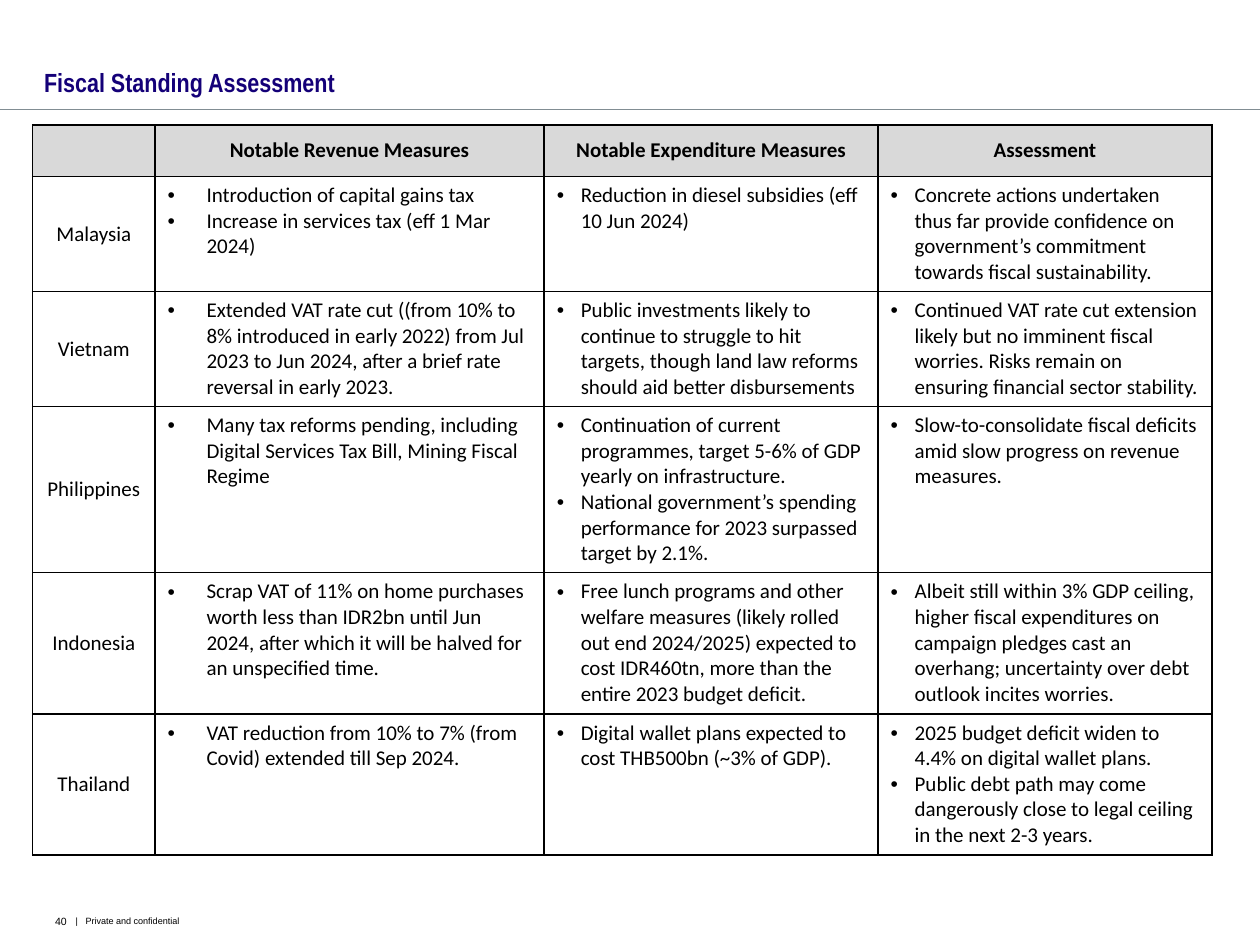
from dataclasses import dataclass

from lxml import etree
from pptx import Presentation
from pptx.dml.color import RGBColor
from pptx.enum.shapes import MSO_CONNECTOR
from pptx.enum.text import MSO_ANCHOR, MSO_AUTO_SIZE, PP_ALIGN
from pptx.oxml.ns import qn
from pptx.util import Inches, Pt

LEFT, CENTER, RIGHT = PP_ALIGN.LEFT, PP_ALIGN.CENTER, PP_ALIGN.RIGHT
TOP, MIDDLE, BOTTOM = MSO_ANCHOR.TOP, MSO_ANCHOR.MIDDLE, MSO_ANCHOR.BOTTOM
STRAIGHT = MSO_CONNECTOR.STRAIGHT
NO_AUTOFIT = MSO_AUTO_SIZE.NONE


@dataclass(frozen=True)
class Theme:
    title_font: str = "Arial Narrow"
    table_font: str = "Calibri"
    footer_font: str = "Arial"
    title_size: float = 15
    table_size: float = 12
    page_size: float = 6
    footer_size: float = 5.2
    ink: str = "000000"
    title: str = "140078"
    rule: str = "818D93"
    header: str = "D9D9D9"


THEME = Theme()

# Table content: country, then the bullets of each column
HEADERS = ["", "Notable Revenue Measures", "Notable Expenditure Measures", "Assessment"]
COUNTRIES = [
    ("Malaysia",
     ["Introduction of capital gains tax",
      "Increase in services tax (eff 1 Mar 2024)"],
     ["Reduction in diesel subsidies (eff 10 Jun 2024)"],
     ["Concrete actions undertaken thus far provide confidence on "
      "government’s commitment towards fiscal sustainability."]),
    ("Vietnam",
     ["Extended VAT rate cut ((from 10% to 8% introduced in early 2022) from "
      "Jul 2023 to Jun 2024, after a brief rate reversal in early 2023."],
     ["Public investments likely to continue to struggle to hit targets, "
      "though land law reforms should aid better disbursements"],
     ["Continued VAT rate cut extension likely but no imminent fiscal worries. "
      "Risks remain on ensuring financial sector stability."]),
    ("Philippines",
     ["Many tax reforms pending, including Digital Services Tax Bill, "
      "Mining Fiscal Regime"],
     ["Continuation of current programmes, target 5-6% of GDP yearly on infrastructure.",
      "National government’s spending performance for 2023 surpassed target by 2.1%."],
     ["Slow-to-consolidate fiscal deficits amid slow progress on revenue measures."]),
    ("Indonesia",
     ["Scrap VAT of 11% on home purchases worth less than IDR2bn until Jun 2024, "
      "after which it will be halved for an unspecified time."],
     ["Free lunch programs and other welfare measures (likely rolled out end "
      "2024/2025) expected to cost IDR460tn, more than the entire 2023 budget deficit."],
     ["Albeit still within 3% GDP ceiling, higher fiscal expenditures on campaign "
      "pledges cast an overhang; uncertainty over debt outlook incites worries."]),
    ("Thailand",
     ["VAT reduction from 10% to 7% (from Covid) extended till Sep 2024."],
     ["Digital wallet plans expected to cost THB500bn (~3% of GDP)."],
     ["2025 budget deficit widen to 4.4% on digital wallet plans.",
      "Public debt path may come dangerously close to legal ceiling in the next 2-3 years."]),
]
COL_WIDTHS = [0.97, 3.09, 2.65, 2.65]
ROW_HEIGHTS = [0.41, 0.91, 0.91, 1.32, 1.12, 1.12]
BULLET_INDENTS = [0.31, 0.19, 0.19]


def write(tf, lines, *, font, size, color=THEME.ink, bold=False, align=LEFT,
          indent=None, tab=None):
    """Fill a text frame, one paragraph a line, with optional bullets or a tab stop."""
    for i, line in enumerate(lines):
        p = tf.paragraphs[0] if i == 0 else tf.add_paragraph()
        p.alignment = align
        p.space_before = Pt(0)
        pPr = p._p.get_or_add_pPr()
        if indent:
            pPr.set("marL", str(Inches(indent)))
            pPr.set("indent", str(-Inches(indent)))
            etree.SubElement(pPr, qn("a:buFont"), typeface="Arial")
            etree.SubElement(pPr, qn("a:buChar"), char="•")
        if tab:
            tabs = etree.SubElement(pPr, qn("a:tabLst"))
            etree.SubElement(tabs, qn("a:tab"), pos=str(Inches(tab)), algn="l")
        r = p.add_run()
        r.text = line
        r.font.name, r.font.size, r.font.bold = font, Pt(size), bold
        r.font.color.rgb = RGBColor.from_string(color)


class SlideBuilder:
    def __init__(self, slide, theme):
        self.s = slide
        self.theme = theme

    def frame(self, sp, box, margins, anchor):
        """Place a text shape and set its insets and anchor."""
        sp.left, sp.top, sp.width, sp.height = map(Inches, box)
        tf = sp.text_frame
        tf.word_wrap = True
        tf.auto_size = NO_AUTOFIT
        tf.vertical_anchor = anchor
        tf.margin_left, tf.margin_top, tf.margin_right, tf.margin_bottom = map(Inches, margins)
        return tf

    def title(self, text, box):
        tf = self.frame(self.s.shapes.title, box, (0, 0.09, 0, 0.09), BOTTOM)
        write(tf, [text], font=self.theme.title_font, size=self.theme.title_size,
              color=self.theme.title, bold=True)

    def text(self, text, box, margins=(0, 0, 0, 0), **style):
        sp = self.s.shapes.add_textbox(*map(Inches, box))
        write(self.frame(sp, box, margins, MIDDLE), [text],
              font=self.theme.footer_font, **style)

    def rule(self, y, width):
        line = self.s.shapes.add_connector(STRAIGHT, 0, Inches(y), Inches(width), Inches(y))
        line.line.color.rgb = RGBColor.from_string(self.theme.rule)
        line.line.width = Pt(0.5)
        etree.SubElement(line._element.spPr, qn("a:effectLst"))

    def cell(self, cell, lines, anchor=TOP, fill=None, **style):
        tcPr = cell._tc.get_or_add_tcPr()
        for side in ("lnL", "lnR", "lnT", "lnB"):
            ln = etree.SubElement(tcPr, qn(f"a:{side}"), w=str(Pt(1)))
            solid = etree.SubElement(ln, qn("a:solidFill"))
            etree.SubElement(solid, qn("a:srgbClr"), val=self.theme.ink)
        if fill:
            cell.fill.solid()
            cell.fill.fore_color.rgb = RGBColor.from_string(fill)
        else:
            cell.fill.background()
        cell.vertical_anchor = anchor
        write(cell.text_frame, lines, font=self.theme.table_font,
              size=self.theme.table_size, **style)

    def table(self, left, top):
        shape = self.s.shapes.add_table(
            len(ROW_HEIGHTS), len(COL_WIDTHS), Inches(left), Inches(top),
            Inches(sum(COL_WIDTHS)), Inches(sum(ROW_HEIGHTS)))
        table = shape.table
        table.horz_banding = False
        for col, width in zip(table.columns, COL_WIDTHS):
            col.width = Inches(width)
        for row, height in zip(table.rows, ROW_HEIGHTS):
            row.height = Inches(height)
        for c, header in enumerate(HEADERS):
            self.cell(table.cell(0, c), [header] if header else [], MIDDLE,
                      self.theme.header, bold=True, align=CENTER)
        for r, (country, *columns) in enumerate(COUNTRIES, 1):
            self.cell(table.cell(r, 0), [country], MIDDLE, align=CENTER)
            for c, (bullets, indent) in enumerate(zip(columns, BULLET_INDENTS), 1):
                self.cell(table.cell(r, c), bullets, indent=indent)


def main():
    prs = Presentation()
    prs.slide_width, prs.slide_height = Inches(10), Inches(7.5)
    slide = SlideBuilder(prs.slides.add_slide(prs.slide_layouts[5]), THEME)

    # Heading
    slide.rule(0.87, 10)
    slide.title("Fiscal Standing Assessment", (0.35, 0, 9.3, 0.87))

    # Country comparison
    slide.table(0.26, 0.99)

    # Footer
    slide.text("40", (0, 7.12, 0.53, 0.38), size=THEME.page_size, align=RIGHT)
    slide.text("|\tPrivate and confidential", (0.53, 7.12, 8.21, 0.38),
               (0.07, 0, 0.35, 0), size=THEME.footer_size, tab=0.08)
    prs.save("out.pptx")


if __name__ == "__main__":
    main()
